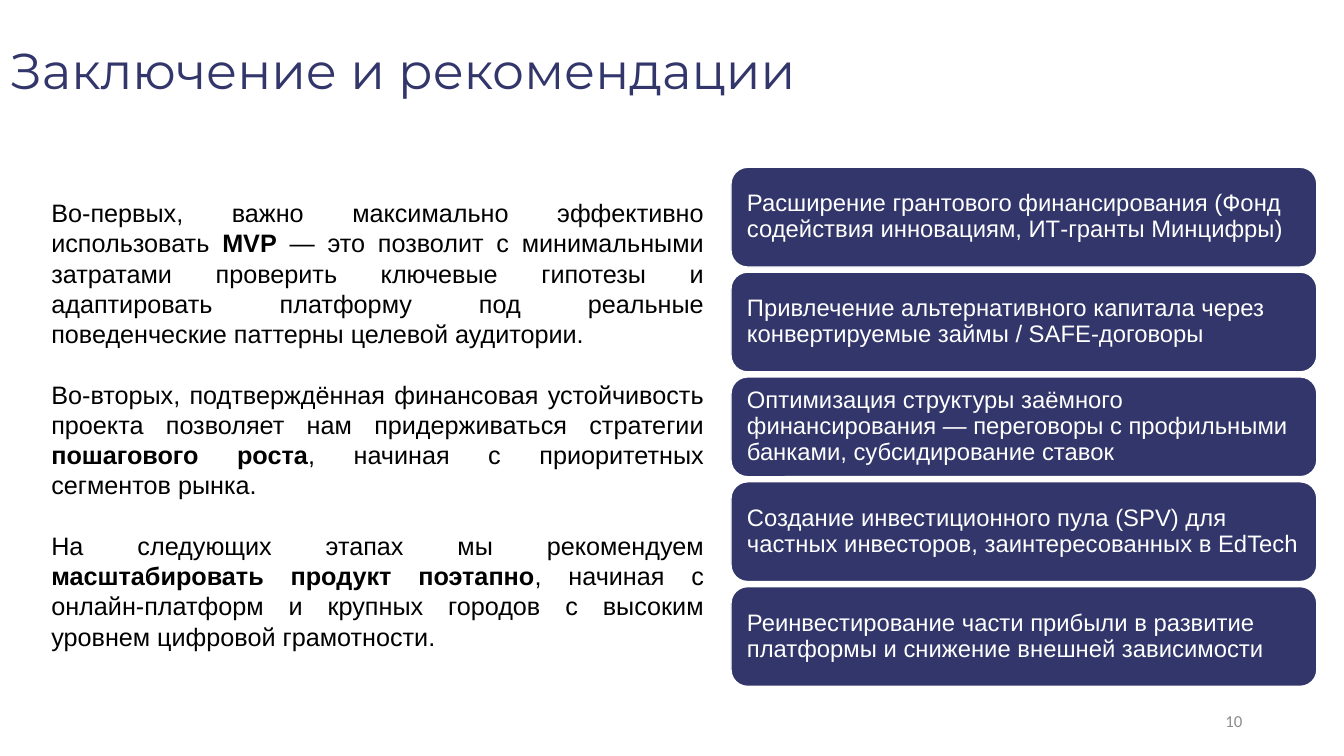
import pptx
import pptx.dml.color
import pptx.enum.shapes
import pptx.enum.text
import pptx.util

RGBColor = pptx.dml.color.RGBColor
Pt = pptx.util.Pt
ALIGN = pptx.enum.text.PP_ALIGN
ANCHOR = pptx.enum.text.MSO_ANCHOR

NAVY = RGBColor(0x32, 0x36, 0x6A)
WHITE = RGBColor(0xFF, 0xFF, 0xFF)
BLACK = RGBColor(0x00, 0x00, 0x00)
GREY = RGBColor(0x8C, 0x8C, 0x8C)

SLIDE_W = pptx.util.Inches(13.33)
SLIDE_H = pptx.util.Inches(7.5)

# Boxes are left, top, width and height in percent of the slide.
TITLE_BOX = (0, 0, 86.27, 19.33)
ARGUMENTS_BOX = (3.08, 25.47, 50.04, 61.87)
MEASURES_BOX = (54.39, 22.13, 43.59, 68.67)
NUMBER_BOX = (70.67, 92.67, 22.51, 5.33)
MEASURE_GAP = 0.67

ARGUMENTS = [
    ("Во-первых, важно максимально эффективно использовать ", "MVP",
     " — это позволит с минимальными затратами проверить ключевые гипотезы и "
     "адаптировать платформу под реальные поведенческие паттерны целевой аудитории."),
    ("Во-вторых, подтверждённая финансовая устойчивость проекта позволяет нам "
     "придерживаться стратегии ", "пошагового роста",
     ", начиная с приоритетных сегментов рынка."),
    ("На следующих этапах мы рекомендуем ", "масштабировать продукт поэтапно",
     ", начиная с онлайн-платформ и крупных городов с высоким уровнем цифровой грамотности."),
]
MEASURES = [
    "Расширение грантового финансирования (Фонд содействия инновациям, ИТ-гранты Минцифры)",
    "Привлечение альтернативного капитала через конвертируемые займы / SAFE-договоры",
    "Оптимизация структуры заёмного финансирования — переговоры с профильными банками, "
    "субсидирование ставок",
    "Создание инвестиционного пула (SPV) для частных инвесторов, заинтересованных в EdTech",
    "Реинвестирование части прибыли в развитие платформы и снижение внешней зависимости",
]


def to_emu(box):
    """Turn a box in percent of the slide into lengths."""
    return [int(share * size / 100)
            for share, size in zip(box, (SLIDE_W, SLIDE_H, SLIDE_W, SLIDE_H))]


def style_run(r, font, size, color, bold=False):
    """Set the font of one run."""
    r.font.name = font
    r.font.size = Pt(size)
    r.font.color.rgb = color
    r.font.bold = bold


def set_line(sp, text, font, size, color, align=ALIGN.LEFT, spacing=1.0):
    """Fill a shape with one vertically centred paragraph."""
    tf = sp.text_frame
    tf.word_wrap = True
    tf.vertical_anchor = ANCHOR.MIDDLE
    tf.text = text
    p = tf.paragraphs[0]
    p.alignment = align
    p.line_spacing = spacing
    style_run(p.runs[0], font, size, color)


def add_title(s, box):
    """Add the slide title."""
    sp = s.shapes.add_textbox(*to_emu(box))
    set_line(sp, "Заключение и рекомендации", "Montserrat", 36, NAVY, spacing=0.9)


def add_arguments(s, box):
    """Add the justified paragraphs with their bold key words."""
    tf = s.shapes.add_textbox(*to_emu(box)).text_frame
    tf.word_wrap = True
    for i, parts in enumerate(ARGUMENTS):
        p = tf.add_paragraph() if i else tf.paragraphs[0]
        p.alignment = ALIGN.JUSTIFY
        p.space_before = Pt(21.6 if i else 0)
        for j, text in enumerate(parts):
            r = p.add_run()
            r.text = text
            style_run(r, "Arial", 18, BLACK, bold=j == 1)


def add_measures(s, box):
    """Stack the recommendation cards evenly in the box."""
    left, top, width, height = box
    pitch = (height + MEASURE_GAP) / len(MEASURES)
    for i, text in enumerate(MEASURES):
        card = (left, top + i * pitch, width, pitch - MEASURE_GAP)
        sp = s.shapes.add_shape(
            pptx.enum.shapes.MSO_SHAPE.ROUNDED_RECTANGLE, *to_emu(card))
        sp.shadow.inherit = False
        sp.fill.solid()
        sp.fill.fore_color.rgb = NAVY
        sp.line.color.rgb = WHITE
        sp.line.width = Pt(1)
        tf = sp.text_frame
        tf.margin_left = tf.margin_right = pptx.util.Inches(0.11)
        set_line(sp, text, "Arial", 17, WHITE, spacing=0.9)


def add_number(s, box):
    """Add the page number."""
    sp = s.shapes.add_textbox(*to_emu(box))
    set_line(sp, "10", "Calibri", 12, GREY, ALIGN.RIGHT)


def main():
    """Build and save the slide."""
    prs = pptx.Presentation()
    prs.slide_width, prs.slide_height = SLIDE_W, SLIDE_H
    s = prs.slides.add_slide(prs.slide_layouts[6])
    add_title(s, TITLE_BOX)
    add_measures(s, MEASURES_BOX)
    add_arguments(s, ARGUMENTS_BOX)
    add_number(s, NUMBER_BOX)
    prs.save("out.pptx")


if __name__ == "__main__":
    main()
